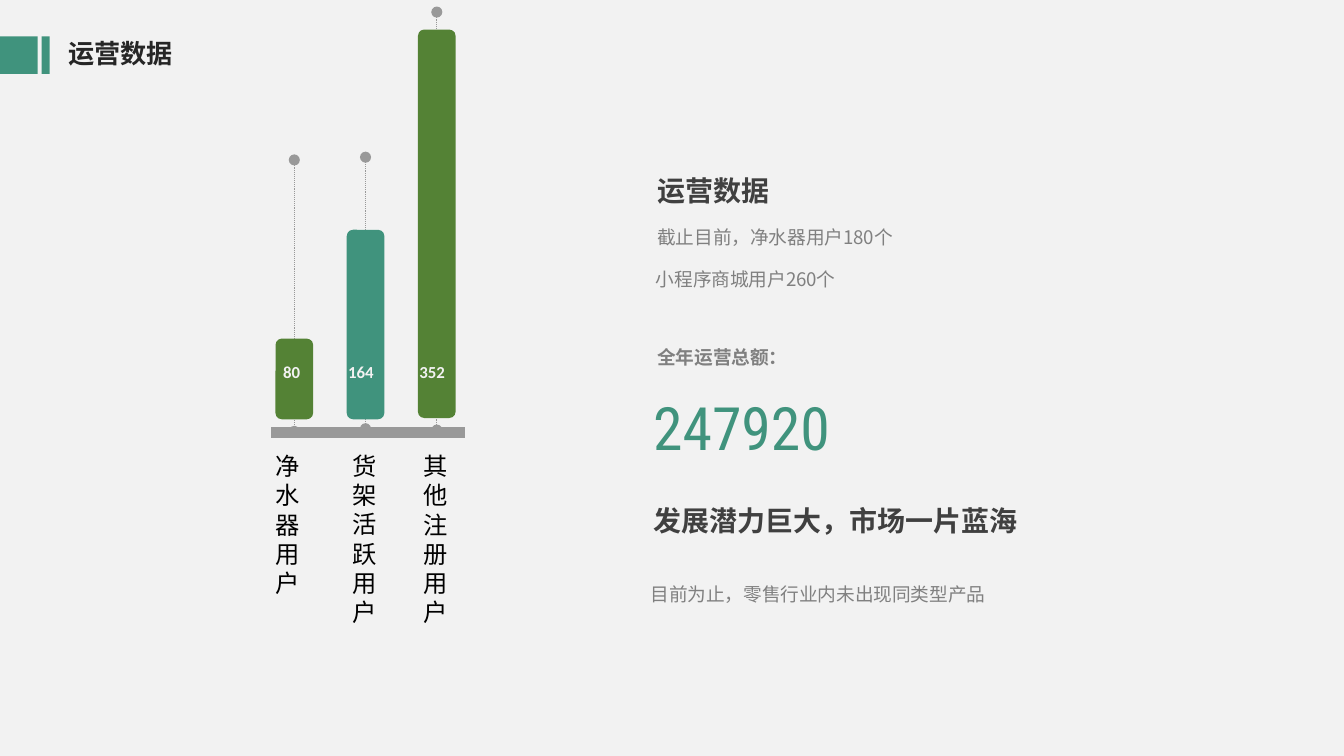
from dataclasses import dataclass

from lxml.etree import SubElement
from pptx import Presentation
from pptx.dml.color import RGBColor
from pptx.enum.dml import MSO_LINE
from pptx.enum.shapes import MSO_CONNECTOR, MSO_SHAPE
from pptx.enum.text import MSO_AUTO_SIZE, PP_ALIGN
from pptx.oxml.ns import qn
from pptx.shapes.connector import Connector
from pptx.slide import Slide
from pptx.util import Inches, Pt

BACKGROUND = RGBColor(0xF2, 0xF2, 0xF2)
TEAL = RGBColor(0x40, 0x93, 0x7D)
GREEN = RGBColor(0x54, 0x82, 0x35)
LINE_GRAY = RGBColor(0x99, 0x99, 0x99)
BODY_GRAY = RGBColor(0x80, 0x80, 0x80)
HEADING_GRAY = RGBColor(0x40, 0x40, 0x40)
TITLE_GRAY = RGBColor(0x26, 0x26, 0x26)
BLACK = RGBColor(0, 0, 0)

CJK_FONT = "Noto Sans CJK SC"
NUMBER_FONT = "Roboto Condensed"
LABEL_FONT = "Calibri"

BAR_WIDTH = 0.28
FIRST_CENTER = 2.19
BAR_PITCH = 0.53


@dataclass(frozen=True)
class TextItem:
    text: str
    left: float
    top: float
    width: float
    height: float
    size: float
    color: RGBColor
    font: str = CJK_FONT
    bold: bool = False
    align: PP_ALIGN = PP_ALIGN.LEFT
    inset: float = 0
    wrap: bool = True


@dataclass(frozen=True)
class Bar:
    top: float
    height: float
    color: RGBColor
    stem_top: float
    stem_bottom: float
    value: str
    value_left: float
    value_width: float
    label: str
    label_left: float
    label_width: float
    label_height: float


BARS = (
    Bar(2.52, 0.6, GREEN, 1.19, 3.21, "80", 2.09, 0.16, "净水器用户", 2, 0.35, 1.35),
    Bar(1.71, 1.41, TEAL, 1.17, 3.19, "164", 2.57, 0.23, "货架活跃用户", 2.57, 0.35, 1.6),
    Bar(0.22, 2.89, GREEN, 0.09, 3.2, "352", 3.1, 0.23, "其他注册用户", 3.1, 0.28, 1.41),
)

TEXTS = (
    TextItem("运营数据", 0.46, 0.23, 2.27, 0.38, 14, TITLE_GRAY, bold=True, inset=0.05),
    TextItem("运营数据", 4.89, 1.29, 2.66, 0.29, 15, HEADING_GRAY, bold=True),
    TextItem("截止目前，净水器用户180个", 4.89, 1.68, 3.42, 0.17, 10, BODY_GRAY, align=PP_ALIGN.JUSTIFY),
    TextItem("小程序商城用户260个", 4.88, 1.99, 3.42, 0.17, 10, BODY_GRAY, align=PP_ALIGN.JUSTIFY),
    TextItem("全年运营总额：", 4.89, 2.57, 1.18, 0.19, 10, BODY_GRAY, bold=True),
    TextItem("247920", 4.86, 2.91, 2.66, 0.54, 32, TEAL, NUMBER_FONT),
    TextItem("发展潜力巨大，市场一片蓝海", 4.86, 3.75, 3.2, 0.29, 15, HEADING_GRAY, bold=True),
    TextItem("目前为止，零售行业内未出现同类型产品", 4.84, 4.34, 6.7, 0.19, 10, BODY_GRAY, align=PP_ALIGN.JUSTIFY),
)


def add_block(slide: Slide, kind: MSO_SHAPE, left: float, top: float,
              width: float, height: float, color: RGBColor) -> None:
    shape = slide.shapes.add_shape(kind, Inches(left), Inches(top), Inches(width), Inches(height))
    shape.shadow.inherit = False
    shape.fill.solid()
    shape.fill.fore_color.rgb = color
    shape.line.fill.background()


def add_line(slide: Slide, start: tuple[float, float], end: tuple[float, float],
             width: float) -> Connector:
    connector = slide.shapes.add_connector(
        MSO_CONNECTOR.STRAIGHT, *(Inches(value) for value in (*start, *end)))
    connector.line.color.rgb = LINE_GRAY
    connector.line.width = Pt(width)
    SubElement(connector._element.spPr, qn("a:effectLst"))
    return connector


def add_stem(slide: Slide, center: float, bar: Bar) -> None:
    stem = add_line(slide, (center, bar.stem_bottom), (center, bar.stem_top), 0.5)
    stem.line.dash_style = MSO_LINE.ROUND_DOT
    outline = stem._element.spPr.find(qn("a:ln"))
    for end in ("a:headEnd", "a:tailEnd"):
        SubElement(outline, qn(end), type="oval")


def add_text(slide: Slide, item: TextItem) -> None:
    box = slide.shapes.add_textbox(
        Inches(item.left), Inches(item.top), Inches(item.width), Inches(item.height))
    frame = box.text_frame
    frame.margin_left = frame.margin_right = Inches(item.inset)
    frame.margin_top = frame.margin_bottom = Inches(item.inset)
    frame.word_wrap = item.wrap
    frame.auto_size = MSO_AUTO_SIZE.SHAPE_TO_FIT_TEXT
    frame.text = item.text
    for paragraph in frame.paragraphs:
        paragraph.alignment = item.align
        font = paragraph.font
        font.name = item.font
        font.size = Pt(item.size)
        font.bold = item.bold
        font.color.rgb = item.color
        defaults = paragraph._p.pPr.find(qn("a:defRPr"))
        SubElement(defaults, qn("a:ea"), typeface=CJK_FONT)


def add_bar_chart(slide: Slide) -> None:
    add_line(slide, (2.02, 3.22), (3.46, 3.22), 6)
    for index, bar in enumerate(BARS):
        center = FIRST_CENTER + index * BAR_PITCH
        add_stem(slide, center, bar)
        add_block(slide, MSO_SHAPE.ROUNDED_RECTANGLE, center - BAR_WIDTH / 2,
                  bar.top, BAR_WIDTH, bar.height, bar.color)
        add_text(slide, TextItem(bar.value, bar.value_left, 2.69, bar.value_width, 0.14, 9,
                                 BACKGROUND, LABEL_FONT, True, PP_ALIGN.CENTER, wrap=False))
        add_text(slide, TextItem("\n".join(bar.label), bar.label_left, 3.31, bar.label_width,
                                 bar.label_height, 13, BLACK, LABEL_FONT, inset=0.05, wrap=False))


def main() -> None:
    """Build the operating data slide and save it."""
    presentation = Presentation()
    presentation.slide_width = Inches(10)
    presentation.slide_height = Inches(10) * 9 // 16
    slide = presentation.slides.add_slide(presentation.slide_layouts[6])
    slide.background.fill.solid()
    slide.background.fill.fore_color.rgb = BACKGROUND
    for left, width in ((0, 0.28), (0.31, 0.06)):
        add_block(slide, MSO_SHAPE.RECTANGLE, left, 0.27, width, 0.28, TEAL)
    add_bar_chart(slide)
    for item in TEXTS:
        add_text(slide, item)
    presentation.save("out.pptx")


if __name__ == "__main__":
    main()
